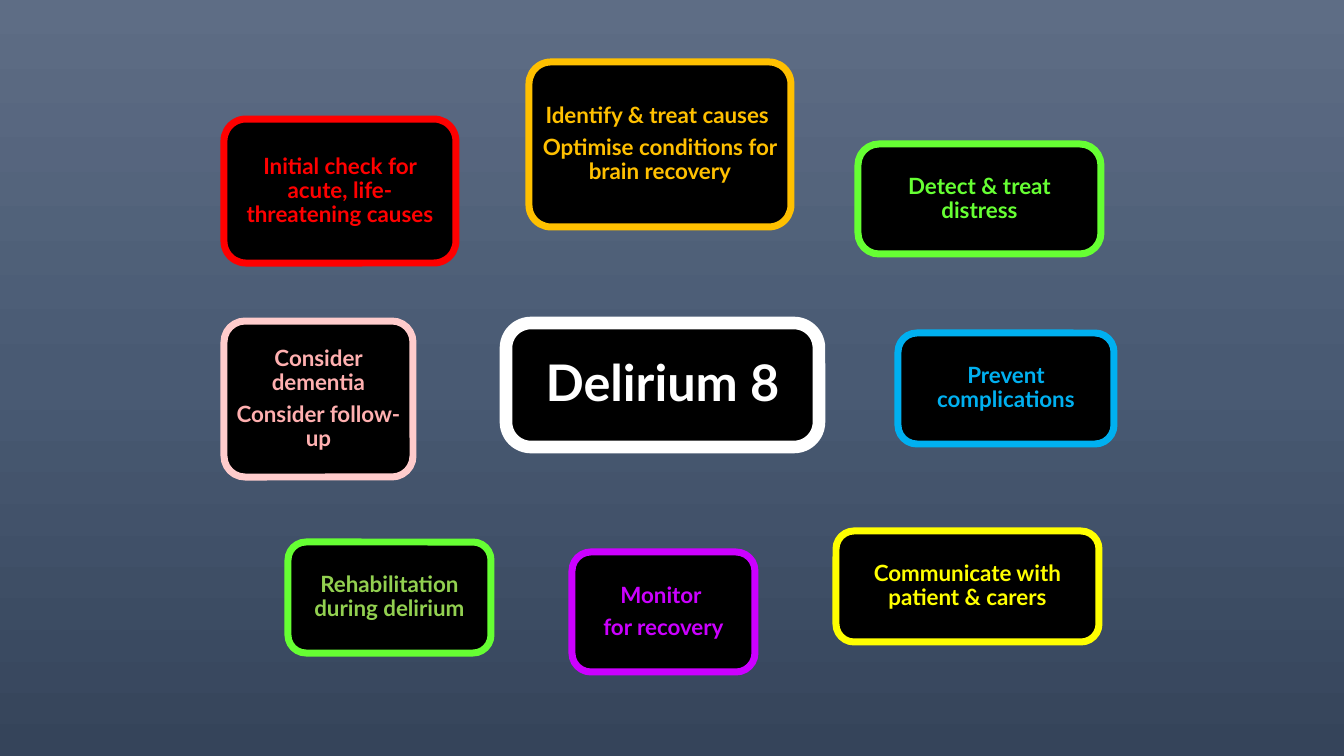
from copy import deepcopy

from pptx import Presentation
from pptx.dml.color import RGBColor
from pptx.enum.shapes import MSO_SHAPE
from pptx.enum.text import MSO_ANCHOR, PP_ALIGN
from pptx.oxml.ns import qn
from pptx.util import Emu, Pt

# Content
BACKGROUND = [(0, "5E6D85"), (0.5, "495A73"), (1, "35445A")]
FONT = "Lato"

HUB = dict(box=(506, 323, 313, 124), radius=25, line="FFFFFF",
           paragraphs=["Delirium 8"], size=36, weight=9, inset=18)

# Each step: box (left, top, width, height), corner radius, line, text colour, paragraphs
STEPS = [
    ((224, 119, 232, 144), 22, "FF0000", "FF0000",
     ["Initial check for acute, life-threatening causes"]),
    ((529, 62, 262, 165), 22, "FFC000", "FFC000",
     ["Identify & treat causes ", "Optimise conditions for brain recovery"]),
    ((858, 144, 243, 110), 21, "66FF33", "66FF33", ["Detect & treat distress"]),
    ((898, 333, 216, 111), 19, "00B0F0", "00B0F0", ["Prevent complications"]),
    ((836, 531, 263, 111), 18, "FFFF00", "FFFF00",
     ["Communicate with patient & carers"]),
    ((572, 552, 183, 120), 19, "CC00FF", "CC00FF", ["Monitor ", "for recovery"]),
    ((288, 542, 203, 111), 18, "66FF33", "92D050", ["Rehabilitation during delirium"]),
    ((224, 321, 189, 156), 21, "FFCCCC", "FFB0B0",
     ["Consider dementia", "Consider follow-up"]),
]


def px(n):
    return Emu(round(n * 914400 / 100.8))


def rgb(color):
    return RGBColor.from_string(color)


def write(tf, paragraphs, size, color):
    for i, text in enumerate(paragraphs):
        p = tf.paragraphs[0] if i == 0 else tf.add_paragraph()
        p.alignment = PP_ALIGN.CENTER
        p.line_spacing = 0.9
        p.space_after = Pt(round(size * 0.35, 1))
        r = p.add_run()
        r.text = text
        r.font.name = FONT
        r.font.size = Pt(size)
        r.font.bold = True
        r.font.color.rgb = rgb(color)


def add_box(s, box, radius, line, paragraphs, color=None, size=16, weight=5, inset=10):
    sp = s.shapes.add_shape(MSO_SHAPE.ROUNDED_RECTANGLE, *map(px, box))
    sp.adjustments[0] = radius / min(box[2:])
    sp.shadow.inherit = False
    sp.fill.solid()
    sp.fill.fore_color.rgb = rgb("000000")
    sp.line.color.rgb = rgb(line)
    sp.line.width = Pt(weight)
    tf = sp.text_frame
    tf.word_wrap = True
    tf.vertical_anchor = MSO_ANCHOR.MIDDLE
    # A rounded rectangle already insets its text by 0.29 of the radius
    margin = px(inset - round(0.29 * radius))
    tf.margin_left = tf.margin_right = tf.margin_top = tf.margin_bottom = margin
    write(tf, paragraphs, size, color or line)


def paint_background(s):
    fill = s.background.fill
    fill.gradient()
    fill.gradient_angle = 270
    last = list(s.background._cSld.iter(qn("a:gs")))[-1]
    last.addnext(deepcopy(last))
    for stop, (position, color) in zip(fill.gradient_stops, BACKGROUND):
        stop.position = position
        stop.color.rgb = rgb(color)


def main():
    prs = Presentation()
    prs.slide_width, prs.slide_height = px(1344), px(756)
    s = prs.slides.add_slide(prs.slide_layouts[6])
    paint_background(s)

    # Hub in the centre, steps around it
    add_box(s, **HUB)
    for box, radius, line, color, paragraphs in STEPS:
        add_box(s, box, radius, line, paragraphs, color)

    prs.save("out.pptx")


if __name__ == "__main__":
    main()
